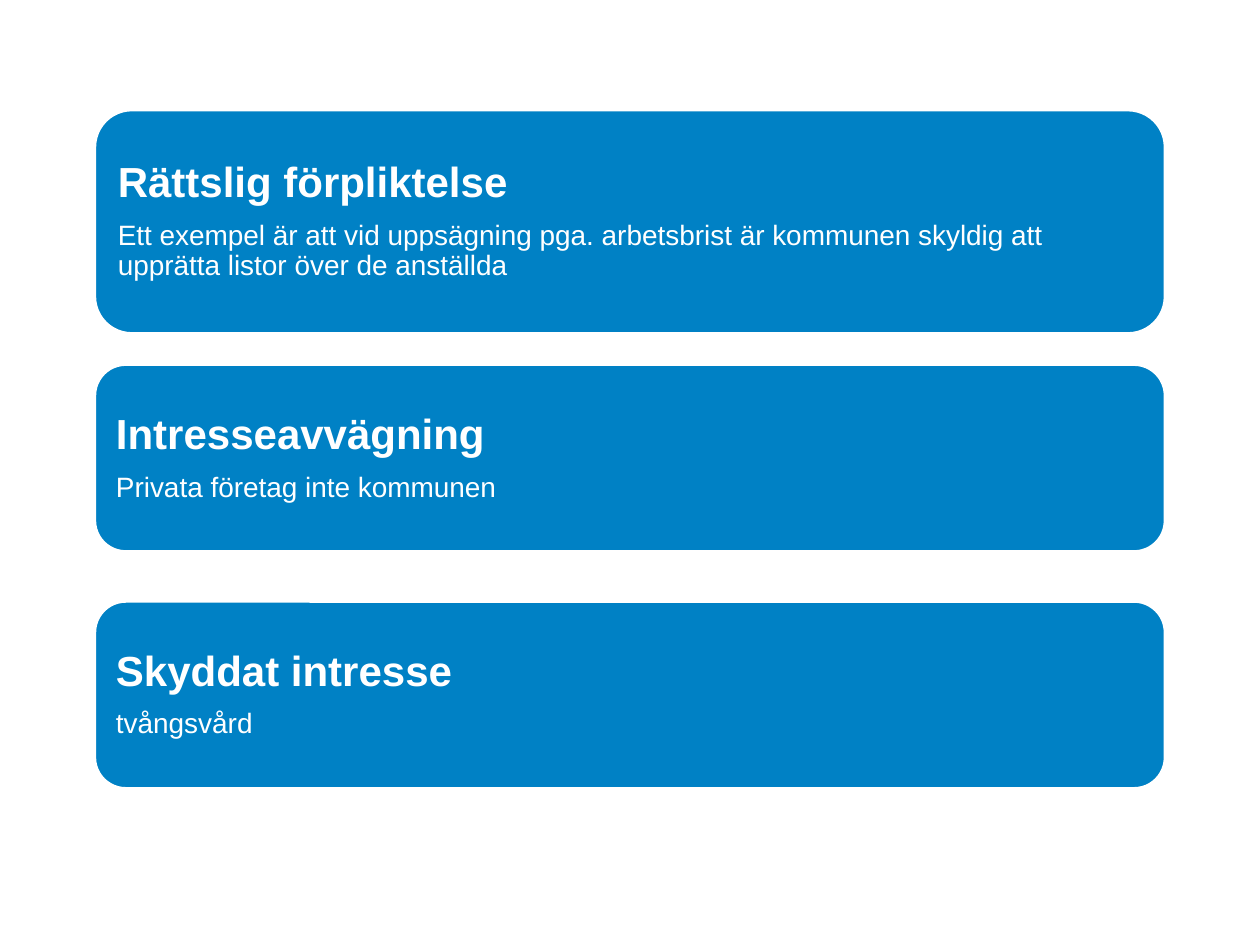
import pptx
import pptx.util
import pptx.dml.color
import pptx.enum.shapes
import pptx.enum.text

Inches = pptx.util.Inches
Pt = pptx.util.Pt

COLORS = {"card": "0081C5", "white": "FFFFFF"}


class SlideBuilder:
    """Holds the style and the current slide."""

    font_name = "Arial"
    heading_size = 24
    body_size = 16
    margin = 0.1

    def __init__(self, slide):
        self.slide = slide

    def color(self, name):
        return pptx.dml.color.RGBColor.from_string(COLORS[name])

    def add_paragraph(self, paragraph, text, size, bold, space_after):
        paragraph.alignment = pptx.enum.text.PP_ALIGN.LEFT
        paragraph.line_spacing = 0.9
        paragraph.space_after = Pt(space_after)
        run = paragraph.add_run()
        run.text = text
        run.font.name = self.font_name
        run.font.size = Pt(size)
        run.font.bold = bold
        run.font.color.rgb = self.color("white")

    def add_card(self, top, height, heading, body):
        shape = self.slide.shapes.add_shape(
            pptx.enum.shapes.MSO_SHAPE.ROUNDED_RECTANGLE,
            Inches(0.75), Inches(top), Inches(8.5), Inches(height))
        shape.shadow.inherit = False
        shape.fill.solid()
        shape.fill.fore_color.rgb = self.color("card")
        shape.line.color.rgb = self.color("white")
        shape.line.width = Pt(2)

        frame = shape.text_frame
        frame.word_wrap = True
        frame.vertical_anchor = pptx.enum.text.MSO_ANCHOR.MIDDLE
        frame.margin_left = frame.margin_right = Inches(self.margin)
        frame.margin_top = frame.margin_bottom = Inches(self.margin)
        self.add_paragraph(frame.paragraphs[0], heading,
                           self.heading_size, True, 8.4)
        self.add_paragraph(frame.add_paragraph(), body,
                           self.body_size, False, 0)


def main():
    presentation = pptx.Presentation()
    presentation.slide_width = Inches(10)
    presentation.slide_height = Inches(7.5)
    blank_layout = presentation.slide_layouts[6]
    builder = SlideBuilder(presentation.slides.add_slide(blank_layout))

    # Legal grounds: top, height, heading, explanation
    cards = [
        (0.87, 1.78, "Rättslig förpliktelse",
         "Ett exempel är att vid uppsägning pga. arbetsbrist är kommunen "
         "skyldig att upprätta listor över de anställda"),
        (2.89, 1.49, "Intresseavvägning", "Privata företag inte kommunen"),
        (4.77, 1.49, "Skyddat intresse", "tvångsvård"),
    ]
    for card in cards:
        builder.add_card(*card)

    presentation.save("out.pptx")


if __name__ == "__main__":
    main()
